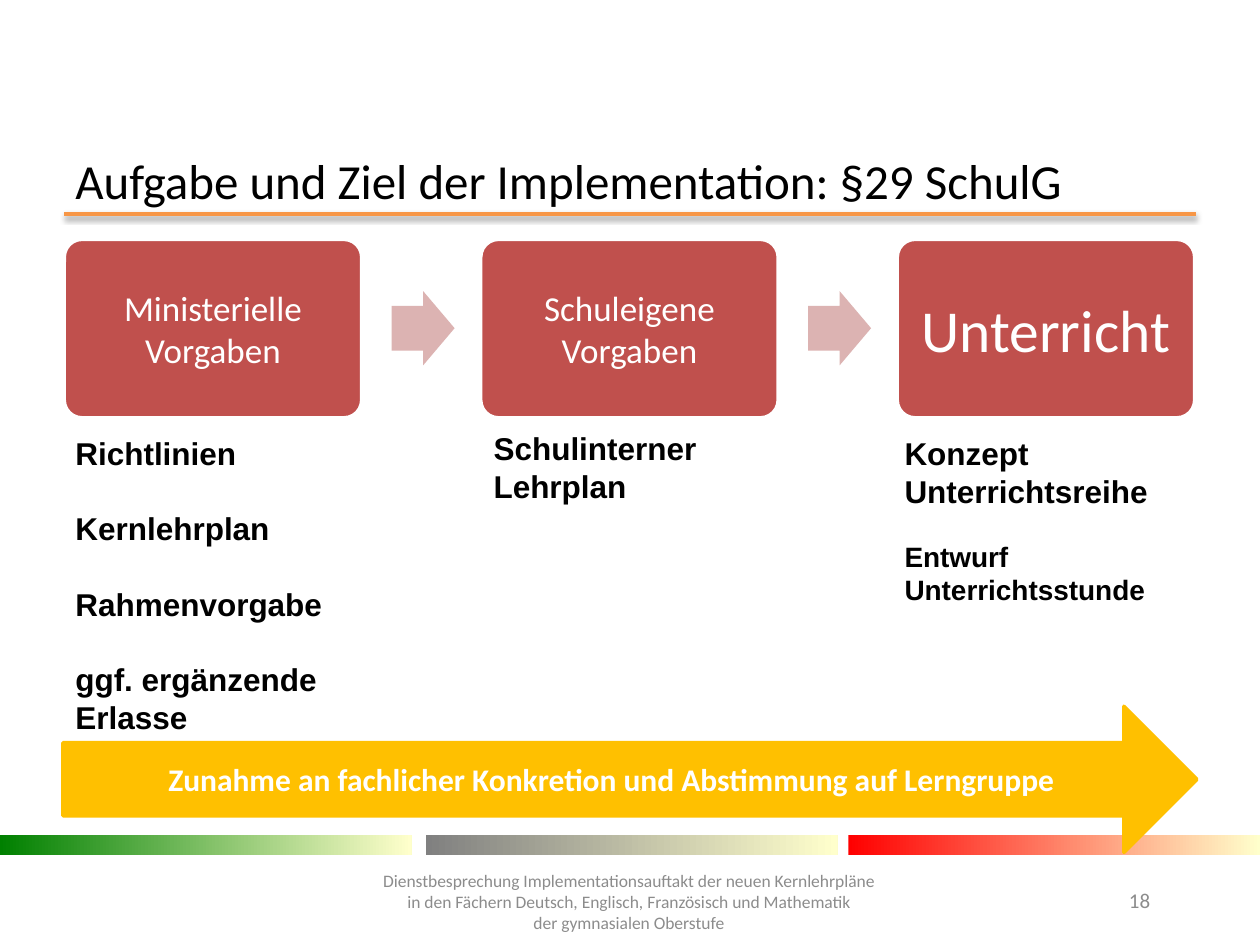
from dataclasses import dataclass

from lxml.etree import SubElement
from pptx import Presentation
from pptx.dml.color import RGBColor as RGB
from pptx.enum.shapes import MSO_CONNECTOR as Link, MSO_SHAPE as Kind
from pptx.enum.text import MSO_ANCHOR as Anchor, PP_ALIGN as Align
from pptx.oxml.ns import qn
from pptx.util import Pt


@dataclass(frozen=True)
class Theme:
    head: str = "Calibri"
    body: str = "Arial"
    black: str = "000000"
    white: str = "FFFFFF"
    red: str = "C0504D"
    pink: str = "DCB3B2"
    gold: str = "FFC000"
    rule: str = "F79646"
    grey: str = "8C8C8C"
    cream: str = "FFFFCC"
    title: float = 28
    big: float = 34
    step: float = 20
    text: float = 18
    small: float = 16
    page: float = 12
    foot: float = 10


@dataclass(frozen=True)
class Box:
    x: float
    y: float
    w: float
    h: float


@dataclass(frozen=True)
class Step:
    label: str
    size: float


@dataclass(frozen=True)
class Note:
    box: Box
    lines: tuple[str, ...]
    sizes: tuple[float, ...]
    gap: float = 0


@dataclass(frozen=True)
class Bar:
    x: float
    color: str


T = Theme()

# Process steps, evenly spaced
FIRST = Box(36.7, 136.8, 170, 102)
PITCH = 238
PAD = 6
ARROW = Box(223.8, 166.3, 36, 42.5)
STEPS = (
    Step("Ministerielle Vorgaben", T.step),
    Step("Schuleigene Vorgaben", T.step),
    Step("Unterricht", T.big),
)

# Notes below the steps
NOTES = (
    Note(Box(36, 244.3, 170.6, 225.4),
         ("Richtlinien", "Kernlehrplan", "Rahmenvorgabe", "ggf. ergänzende Erlasse"),
         (T.text,) * 4, 21.6),
    Note(Box(275, 241.7, 187.2, 51), ("Schulinterner Lehrplan",), (T.text,)),
    Note(Box(509.8, 244.3, 177, 150.5),
         ("Konzept Unterrichtsreihe", "Entwurf Unterrichtsstunde"),
         (T.text, T.small), 17),
)

# Colour bars above the footer
BARS = (Bar(0, "008000"), Bar(243.4, "808080"), Bar(484.8, "FF0000"))
FOOT = ("Dienstbesprechung Implementationsauftakt der neuen Kernlehrpläne\v"
        "in den Fächern Deutsch, Englisch, Französisch und Mathematik\v"
        "der gymnasialen Oberstufe")


def write(shape, *lines: str, sizes: tuple[float, ...], font: str = T.head,
          color: str = T.black, bold: bool = False, align=Align.LEFT,
          anchor=Anchor.TOP, gap: float = 0, pad: float | None = None) -> None:
    frame = shape.text_frame
    frame.word_wrap = True
    frame.vertical_anchor = anchor
    if pad is not None:
        frame.margin_left = frame.margin_right = Pt(pad)
        frame.margin_top = frame.margin_bottom = Pt(pad)
    for i, (line, size) in enumerate(zip(lines, sizes)):
        para = frame.add_paragraph() if i else frame.paragraphs[0]
        para.text = line
        para.alignment = align
        if i and gap:
            para.space_before = Pt(gap)
        for run in para.runs:
            run.font.name = font
            run.font.size = Pt(size)
            run.font.bold = bold
            run.font.color.rgb = RGB.from_string(color)


def area(slide, box: Box):
    return slide.shapes.add_textbox(Pt(box.x), Pt(box.y), Pt(box.w), Pt(box.h))


def form(slide, kind, box: Box, fill: str | None = None, line: str | None = None,
         adjust: tuple[float, ...] = ()):
    shape = slide.shapes.add_shape(kind, Pt(box.x), Pt(box.y), Pt(box.w), Pt(box.h))
    shape.shadow.inherit = False
    for i, value in enumerate(adjust):
        shape.adjustments[i] = value
    if fill:
        shape.fill.solid()
        shape.fill.fore_color.rgb = RGB.from_string(fill)
    if line:
        shape.line.color.rgb = RGB.from_string(line)
        shape.line.width = Pt(2)
    else:
        shape.line.fill.background()
    return shape


def rule(slide, left: float, right: float, y: float) -> None:
    line = slide.shapes.add_connector(Link.STRAIGHT, Pt(left), Pt(y), Pt(right), Pt(y))
    line.line.color.rgb = RGB.from_string(T.rule)
    line.line.width = Pt(2)
    # Soft shadow straight below
    effects = SubElement(line.element.spPr, qn("a:effectLst"))
    shade = SubElement(effects, qn("a:outerShdw"), blurRad=str(Pt(3.1)),
                       dist=str(Pt(1.6)), dir="5400000", rotWithShape="0")
    tone = SubElement(shade, qn("a:srgbClr"), val=T.black)
    SubElement(tone, qn("a:alpha"), val="38000")


def band(slide, bar: Bar) -> None:
    shape = form(slide, Kind.RECTANGLE, Box(bar.x, 477.4, 235.2, 11.3))
    shape.fill.gradient()
    shape.fill.gradient_angle = 0
    for stop, color in zip(shape.fill.gradient_stops, (bar.color, T.cream)):
        stop.color.rgb = RGB.from_string(color)


def main() -> None:
    deck = Presentation()
    deck.slide_width, deck.slide_height = Pt(720), Pt(540)
    slide = deck.slides.add_slide(deck.slide_layouts[6])

    # Rule, bars and title
    rule(slide, 36.7, 683.2, 122.4)
    for bar in BARS:
        band(slide, bar)
    write(area(slide, Box(36, 88.6, 648, 28)),
          "Aufgabe und Ziel der Implementation: §29 SchulG",
          sizes=(T.title,), anchor=Anchor.MIDDLE)

    # Steps with arrows between them
    for i, step in enumerate(STEPS):
        move = i * PITCH
        if i:
            form(slide, Kind.RIGHT_ARROW,
                 Box(ARROW.x + move - PITCH, ARROW.y, ARROW.w, ARROW.h),
                 T.pink, adjust=(0.6, 0.5))
        card = form(slide, Kind.ROUNDED_RECTANGLE,
                    Box(FIRST.x + move, FIRST.y, FIRST.w, FIRST.h),
                    T.red, T.white, (0.1,))
        write(card, step.label, sizes=(step.size,), color=T.white,
              align=Align.CENTER, anchor=Anchor.MIDDLE, pad=PAD)

    # Notes
    for note in NOTES:
        write(area(slide, note.box), *note.lines, sizes=note.sizes,
              font=T.body, bold=True, gap=note.gap)

    # Long arrow
    trend = form(slide, Kind.RIGHT_ARROW, Box(36, 403.6, 648, 83.5), T.gold, T.gold)
    write(trend, "Zunahme an fachlicher Konkretion und Abstimmung auf Lerngruppe",
          sizes=(T.text,), color=T.white, bold=True,
          align=Align.CENTER, anchor=Anchor.MIDDLE)

    # Page number and footer
    write(area(slide, Box(638, 503.7, 46, 28.8)), "18", sizes=(T.page,), color=T.grey)
    write(area(slide, Box(183.6, 495, 351.4, 40.3)), FOOT, sizes=(T.foot,),
          color=T.grey, align=Align.CENTER, anchor=Anchor.MIDDLE)

    deck.save("out.pptx")


if __name__ == "__main__":
    main()
